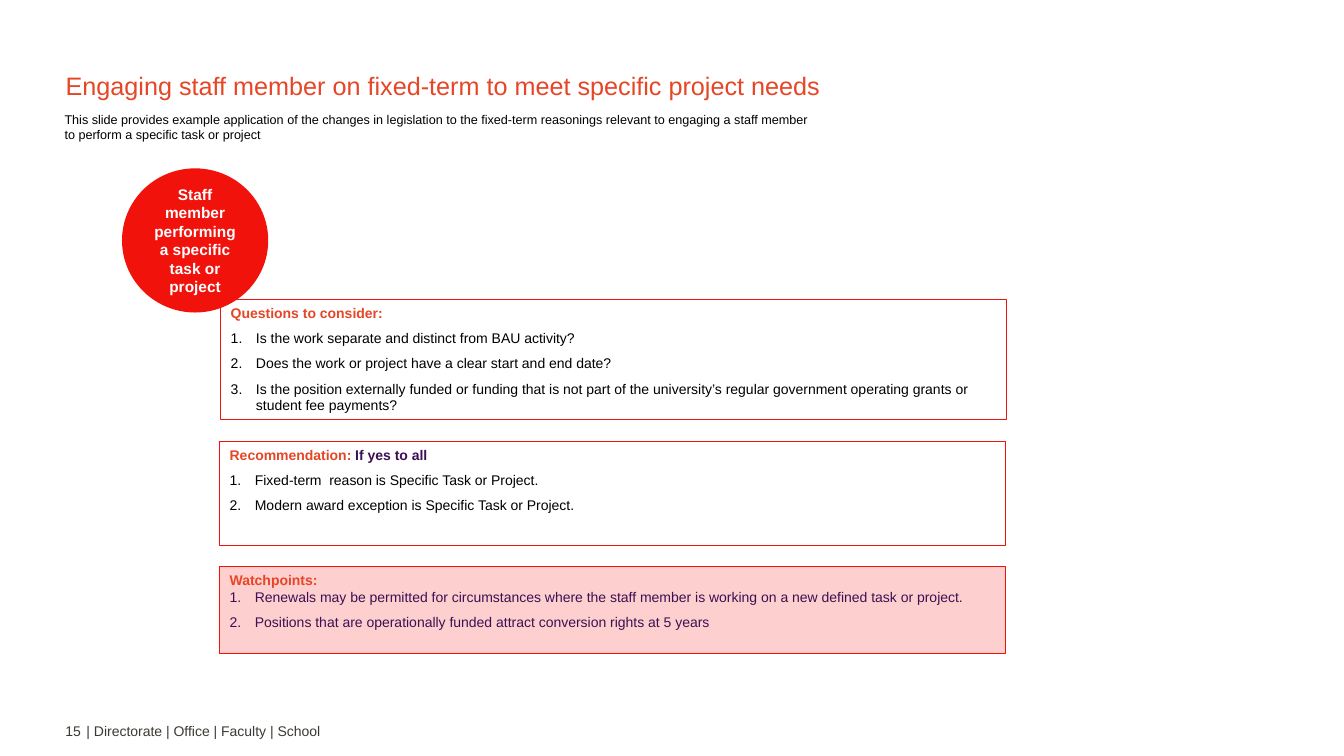
from lxml import etree
from pptx import Presentation
from pptx.dml.color import RGBColor
from pptx.enum import shapes, text
from pptx.oxml import ns
from pptx.util import Inches, Pt

COLOURS = {"heading": "E64626", "red": "F2120C", "pink": "FDCFCE", "purple": "3C1053",
           "black": "000000", "white": "FFFFFF", "footer": "3D3935"}

deck = Presentation()
deck.slide_width, deck.slide_height = Inches(13.33), Inches(7.5)
page = deck.slides.add_slide(deck.slide_layouts[1])


def area(left, top, width, height):
    """Turn percentages of the slide into lengths."""
    across, down = deck.slide_width / 100, deck.slide_height / 100
    return [int(left * across), int(top * down), int(width * across), int(height * down)]


def write(box, paras, size, align="LEFT", anchor="TOP"):
    """Fill a box; each paragraph is (spans, numbered, space before), each span (words, colour, bold)."""
    frame = box.text_frame
    frame.word_wrap = True
    frame.auto_size = text.MSO_AUTO_SIZE.NONE
    frame.vertical_anchor = getattr(text.MSO_ANCHOR, anchor)
    for index, (spans, numbered, before) in enumerate(paras):
        para = frame.add_paragraph() if index else frame.paragraphs[0]
        props = para._p.get_or_add_pPr()
        indent = Inches(0.25) if numbered else 0
        props.set("marL", str(indent))
        props.set("indent", str(-indent))
        if numbered:
            etree.SubElement(props, ns.qn("a:buFont"), typeface="+mj-lt")
            etree.SubElement(props, ns.qn("a:buAutoNum"), type="arabicPeriod")
        else:
            etree.SubElement(props, ns.qn("a:buNone"))
        para.alignment = getattr(text.PP_ALIGN, align)
        para.space_before = Pt(before)
        for words, colour, bold in spans:
            span = para.add_run()
            span.text = words
            for name, value in {"name": "Arial", "size": Pt(size), "bold": bold}.items():
                setattr(span.font, name, value)
            span.font.color.rgb = RGBColor.from_string(COLOURS[colour])


# Footer
for words, place in [("15", (4.13, 94.93, 3.68, 3.6)),
                     ("| Directorate | Office | Faculty | School", (5.7, 94.93, 25.36, 3.6))]:
    write(page.shapes.add_textbox(*area(*place)), [([(words, "footer", False)], False, 0)], 10)

# Title and introduction
title, intro = page.placeholders
for box, place, words, size, colour in [
        (title, (4.13, 8.67, 70.74, 5.33),
         "Engaging staff member on fixed-term to meet specific project needs", 18, "heading"),
        (intro, (4.05, 14.13, 57.16, 5.33),
         "This slide provides example application of the changes in legislation to the fixed-term "
         "reasonings relevant to engaging a staff member to perform a specific task or project",
         9, "black")]:
    box.left, box.top, box.width, box.height = area(*place)
    write(box, [([(words, colour, False)], False, 0)], size)

# Advice panels: place, fill, heading spans, item colour, space before first item, items
panels = [
    ((16.43, 39.6, 58.44, 15.87), None, [("Questions to consider:", "heading", True)], "black", 6,
     ["Is the work separate and distinct from BAU activity?",
      "Does the work or project have a clear start and end date?",
      "Is the position externally funded or funding that is not part of the university’s "
      "regular government operating grants or student fee payments?"]),
    ((16.35, 58.4, 58.44, 13.73), None,
     [("Recommendation: ", "heading", True), ("If yes to all", "purple", True)], "black", 6,
     ["Fixed-term  reason is Specific Task or Project.",
      "Modern award exception is Specific Task or Project."]),
    ((16.35, 74.93, 58.44, 11.47), "pink", [("Watchpoints:", "heading", True)], "purple", 0,
     ["Renewals may be permitted for circumstances where the staff member is working on a "
      "new defined task or project.",
      "Positions that are operationally funded attract conversion rights at 5 years"]),
]
for place, fill, heading, colour, first_gap, items in panels:
    panel = page.shapes.add_shape(shapes.MSO_SHAPE.RECTANGLE, *area(*place))
    panel.shadow.inherit = False
    if fill:
        panel.fill.solid()
        panel.fill.fore_color.rgb = RGBColor.from_string(COLOURS[fill])
    else:
        panel.fill.background()
    panel.line.color.rgb = RGBColor.from_string(COLOURS["red"])
    panel.line.width = Pt(0.75)
    numbered = [([(item, colour, False)], True, 6 if index else first_gap)
                for index, item in enumerate(items)]
    write(panel, [(heading, False, 0)] + numbered, 10)

# Topic circle
circle = page.shapes.add_shape(shapes.MSO_SHAPE.FLOWCHART_CONNECTOR,
                               *area(9.08, 22.27, 10.88, 19.07))
circle.shadow.inherit = False
circle.fill.solid()
circle.fill.fore_color.rgb = RGBColor.from_string(COLOURS["red"])
circle.line.fill.background()
write(circle, [([("Staff member performing a specific task or project", "white", True)], False, 0)],
      11, "CENTER", "MIDDLE")

deck.save("out.pptx")
